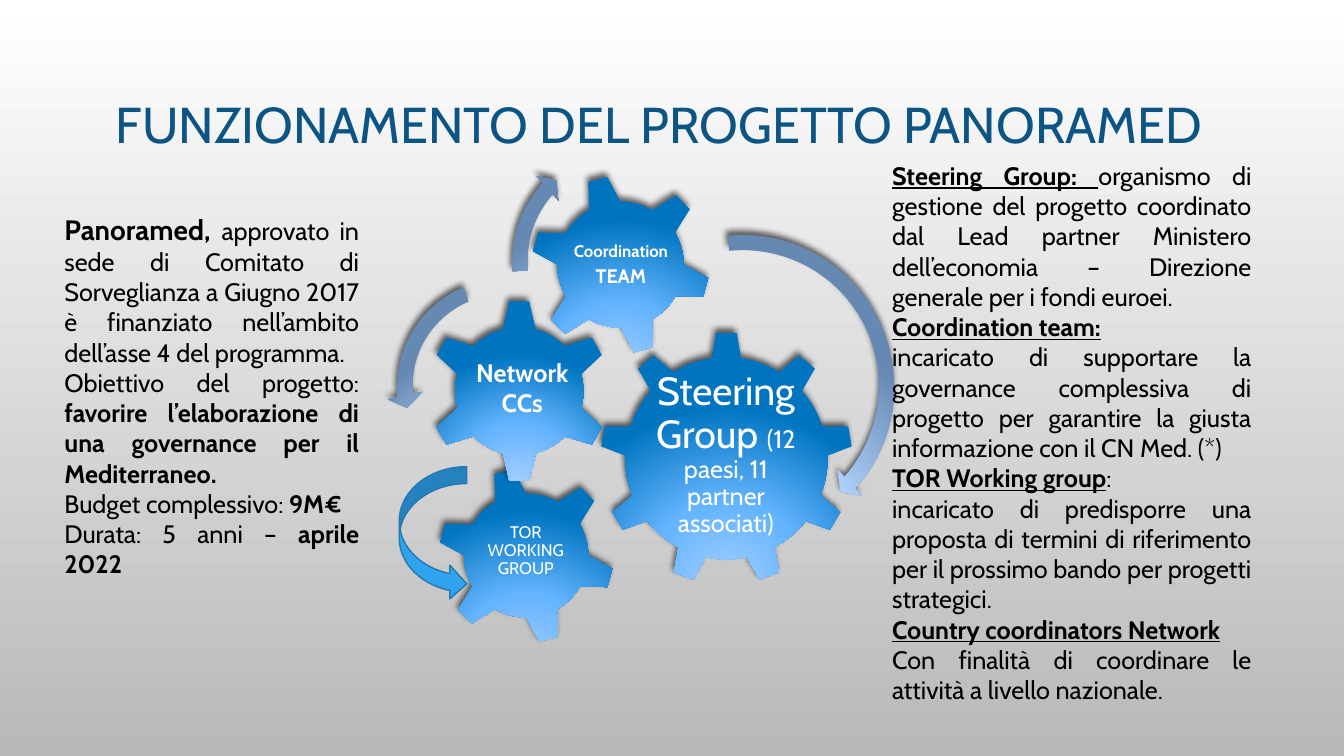
import pptx
import pptx.dml.color
import pptx.enum.shapes
import pptx.enum.text
import pptx.oxml
import pptx.oxml.ns
import pptx.util

Inches, Pt = pptx.util.Inches, pptx.util.Pt
RGBColor = pptx.dml.color.RGBColor
SHAPE = pptx.enum.shapes.MSO_SHAPE
ALIGN = pptx.enum.text.PP_ALIGN
ANCHOR = pptx.enum.text.MSO_ANCHOR

FONT = "Cabin"
WHITE = RGBColor(0xFF, 0xFF, 0xFF)
BLACK = RGBColor(0, 0, 0)
GREY = RGBColor(0xB9, 0xB9, 0xB9)
TITLE_BLUE = RGBColor(0x0B, 0x54, 0x84)
SKY = RGBColor(0x2F, 0xA3, 0xEE)
SKY_EDGE = RGBColor(0x23, 0x79, 0xB0)
GEAR_STOPS = [(0, RGBColor(0xA3, 0xCE, 0xFF)), (46, RGBColor(0x64, 0xB4, 0xFF)),
              (100, RGBColor(0x00, 0x74, 0xBF))]
ARROW_STOPS = [(0, RGBColor(0xCD, 0xE3, 0xFF)), (46, RGBColor(0xB3, 0xD5, 0xFF)),
               (100, RGBColor(0x66, 0x89, 0xB3))]

# Offsets from the diagram's corner: shape, left, top, size, rotation
GEARS = [
    (SHAPE.GEAR_6, 0.5, 3.29, 1.76, 345),
    (SHAPE.GEAR_9, 2.11, 1.95, 2.51, 0),
    (SHAPE.GEAR_6, 0.4, 1.63, 1.82, 0),
    (SHAPE.GEAR_6, 1.42, 0.39, 1.79, 345),
]
# Shape, left, top, size, adjustments
ARROWS = [
    (SHAPE.CIRCULAR_ARROW, 1.92, 0.89, 3.21, (0.047, 2.99, 25.157, 158.624, 0.055)),
    (SHAPE.LEFT_CIRCULAR_ARROW, 0, 1.33, 2.33, (0.065, 4.3, 104.891, 148.378, 0.075)),
    (SHAPE.CIRCULAR_ARROW, 1.14, 0, 2.51, (0.06, 3.941, 133.138, 105.082, 0.07)),
]
# Left, top, width, height, line spacing, paragraphs of (text, size, bold) runs
LABELS = [
    (0.88, 3.63, 0.99, 0.99, 0.9, [[("TOR WORKING GROUP", 12, False)]]),
    (2.61, 2.53, 1.5, 1.29, 0.9, [[("Steering Group ", 28, False),
                                   ("(12 paesi, 11 partner associati)", 18, False)]]),
    (1.82, 0.79, 1, 1, 0.9, [[("Coordination", 12, True)], [("TEAM", 14, True)]]),
    (0.81, 2.15, 1.06, 0.71, 1, [[("Network CCs", 18, True)]]),
]

# Runs of (text, size, bold)
PROJECT = [
    [("Panoramed, ", 20, True),
     ("approvato in sede di Comitato di Sorveglianza a Giugno 2017 è finanziato "
      "nell’ambito dell’asse 4 del programma.", 18, False)],
    [("Obiettivo del progetto: ", 18, False),
     ("favorire l’elaborazione di una governance per il Mediterraneo.", 18, True)],
    [("Budget complessivo: ", 18, False), ("9M€", 18, True)],
    [("Durata: 5 anni – ", 18, False), ("aprile 2022", 18, True)],
]
# Runs of (text, size, bold, underline)
BODIES = [
    [("Steering Group: ", 18, True, True),
     ("organismo di gestione del progetto coordinato dal Lead partner Ministero "
      "dell’economia – Direzione generale per i fondi euroei.", 18, False)],
    [("Coordination team:", 18, True, True)],
    [("incaricato di supportare la governance complessiva di progetto per garantire "
      "la giusta informazione con il CN Med. (*)", 18, False)],
    [("TOR Working group", 18, True, True), (":", 18, False)],
    [("incaricato di predisporre una proposta di termini di riferimento per il "
      "prossimo bando per progetti strategici.", 18, False)],
    [("Country coordinators Network", 18, True, True)],
    [("Con finalità di coordinare le attività a livello nazionale.", 18, False)],
]


def add_text(slide, left, top, width, height, paragraphs, color, align,
             anchor=ANCHOR.TOP, spacing=1, inset=None, after=0):
    box = slide.shapes.add_textbox(Inches(left), Inches(top), Inches(width), Inches(height))
    tf = box.text_frame
    tf.word_wrap = True
    tf.vertical_anchor = anchor
    if inset is not None:
        tf.margin_left = tf.margin_right = tf.margin_top = tf.margin_bottom = Inches(inset)
    for i, runs in enumerate(paragraphs):
        p = tf.paragraphs[0] if i == 0 else tf.add_paragraph()
        p.alignment = align
        p.line_spacing = spacing
        p.space_after = Pt(after)
        p.font.name = FONT
        p.font.color.rgb = color
        for text, size, bold, *underline in runs:
            r = p.add_run()
            r.text = text
            r.font.size = Pt(size)
            r.font.bold = bold
            if underline:
                r.font.underline = True


def add_glossy(slide, kind, left, top, size, stops):
    """Add a square preset shape with a radial gradient and a soft shadow."""
    s = slide.shapes.add_shape(kind, Inches(left), Inches(top), Inches(size), Inches(size))
    s.line.fill.background()
    s.shadow.inherit = False
    ns = pptx.oxml.ns.nsdecls("a")
    gs = "".join(f'<a:gs pos="{pos * 1000}"><a:srgbClr val="{color}"/></a:gs>'
                 for pos, color in stops)
    spPr = s._element.spPr
    spPr.find(pptx.oxml.ns.qn("a:ln")).addprevious(pptx.oxml.parse_xml(
        f'<a:gradFill {ns} rotWithShape="1"><a:gsLst>{gs}</a:gsLst><a:path path="circle">'
        '<a:fillToRect l="50000" t="155000" r="50000" b="-55000"/></a:path></a:gradFill>'))
    spPr.find(pptx.oxml.ns.qn("a:effectLst")).append(pptx.oxml.parse_xml(
        f'<a:outerShdw {ns} blurRad="{Pt(4.25)}" dist="{Pt(3.25)}" dir="14700000" '
        'algn="t" rotWithShape="0"><a:srgbClr val="000000"><a:alpha val="60000"/>'
        '</a:srgbClr></a:outerShdw>'))
    return s


def add_gear_diagram(slide, left, top):
    for kind, x, y, size, rotation in GEARS:
        gear = add_glossy(slide, kind, left + x, top + y, size, GEAR_STOPS)
        gear.rotation = rotation
    for kind, x, y, size, adjustments in ARROWS:
        arrow = add_glossy(slide, kind, left + x, top + y, size, ARROW_STOPS)
        for i, value in enumerate(adjustments):
            arrow.adjustments[i] = value
    curved = slide.shapes.add_shape(SHAPE.CURVED_RIGHT_ARROW, Inches(left + 0.12),
                                    Inches(top + 3.29), Inches(0.67), Inches(1.33))
    curved.shadow.inherit = False
    curved.fill.solid()
    curved.fill.fore_color.rgb = SKY
    curved.line.color.rgb = SKY_EDGE
    curved.line.width = Pt(1)
    for x, y, width, height, spacing, paragraphs in LABELS:
        add_text(slide, left + x, top + y, width, height, paragraphs, WHITE,
                 ALIGN.CENTER, ANCHOR.MIDDLE, spacing, 0.02, 4)


def add_background(slide):
    fill = slide.background.fill
    fill.gradient()
    fill.gradient_angle = 270
    for stop, color in zip(fill.gradient_stops, (WHITE, GREY)):
        stop.color.rgb = color


def main():
    prs = pptx.Presentation()
    prs.slide_width, prs.slide_height = Inches(13.33), Inches(7.5)
    slide = prs.slides.add_slide(prs.slide_layouts[6])
    add_background(slide)
    add_text(slide, 0.87, 0.46, 11.33, 1.6,
             [[("FUNZIONAMENTO DEL PROGETTO PANORAMED", 36, False)]],
             TITLE_BLUE, ALIGN.CENTER, ANCHOR.MIDDLE, 0.9)
    add_gear_diagram(slide, 3.84, 1.34)
    add_text(slide, 0.54, 2.06, 3.12, 3.77, PROJECT, BLACK, ALIGN.JUSTIFY)
    add_text(slide, 8.75, 1.54, 3.76, 5.55, BODIES, BLACK, ALIGN.JUSTIFY)
    prs.save("out.pptx")


if __name__ == "__main__":
    main()
